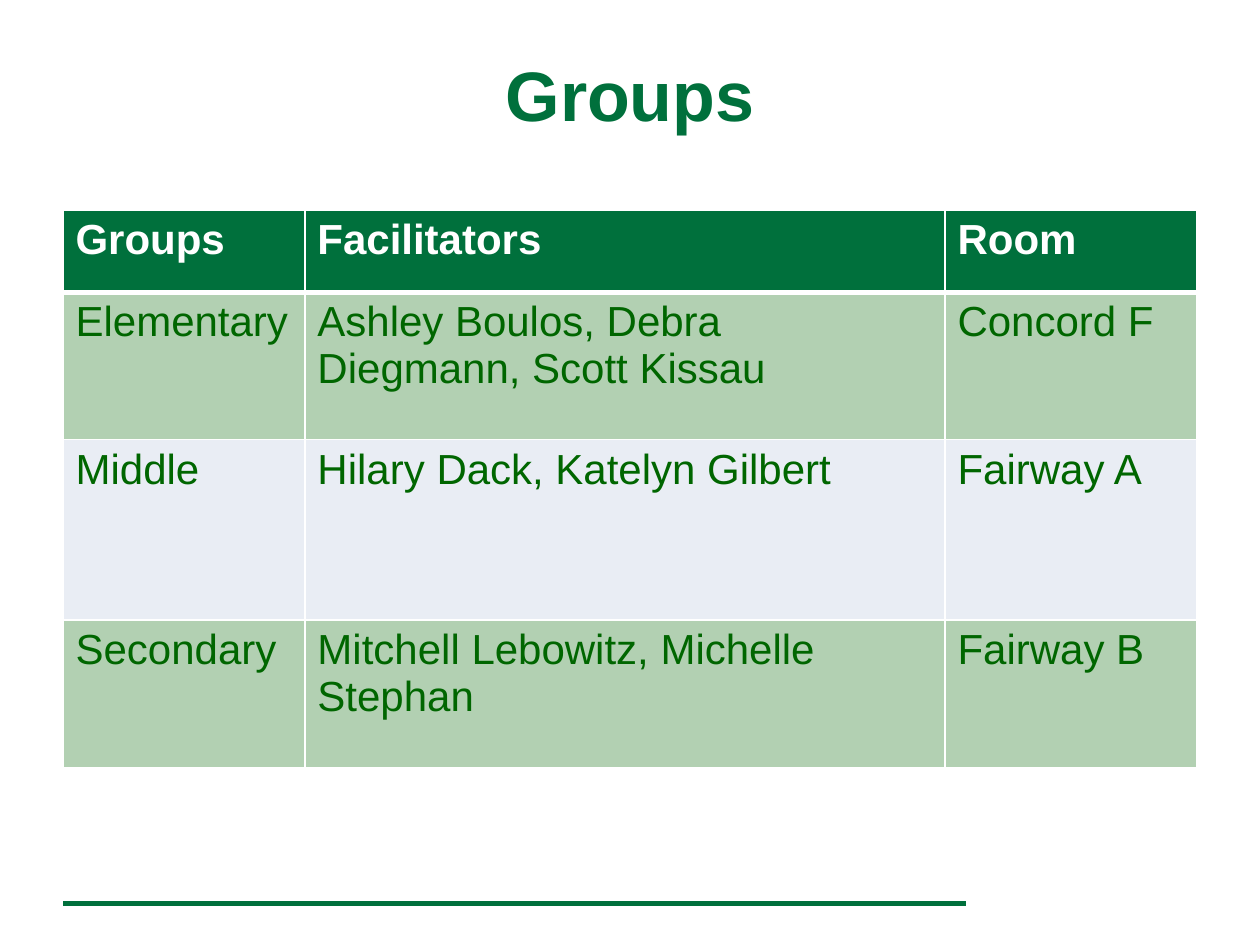
from typing import NamedTuple

from lxml import etree
from pptx import Presentation
from pptx.dml.color import RGBColor
from pptx.enum.shapes import MSO_CONNECTOR
from pptx.enum.text import PP_ALIGN
from pptx.oxml.ns import qn
from pptx.util import Inches, Pt

STRAIGHT = MSO_CONNECTOR.STRAIGHT
CENTER = PP_ALIGN.CENTER

COLORS = {
    "brand_green": "00703C",
    "dark_green": "006600",
    "pale_blue": "E9EDF4",
    "white": "FFFFFF",
}
COLUMN_WIDTHS = (1.92, 5.08, 2)


class RowStyle(NamedTuple):
    fill: str
    text: str
    bold: bool = False
    opacity: int = 100
    top_border: float = 1
    bottom_border: float = 1


class GroupRow(NamedTuple):
    height: float
    texts: tuple[str, str, str]
    style: RowStyle


HEADER = RowStyle("brand_green", "white", bold=True, bottom_border=3)
SHADED = RowStyle("dark_green", "dark_green", opacity=30)
FIRST_SHADED = SHADED._replace(top_border=3)
PLAIN = RowStyle("pale_blue", "dark_green")

ROWS = (
    GroupRow(0.65, ("Groups", "Facilitators", "Room"), HEADER),
    GroupRow(1.17, ("Elementary", "Ashley Boulos, Debra Diegmann, Scott Kissau",
                    "Concord F"), FIRST_SHADED),
    GroupRow(1.43, ("Middle", "Hilary Dack, Katelyn Gilbert", "Fairway A"), PLAIN),
    GroupRow(1.17, ("Secondary", "Mitchell Lebowitz, Michelle Stephan",
                    "Fairway B"), SHADED),
)


def color(name: str) -> RGBColor:
    return RGBColor.from_string(COLORS[name])


def format_text(paragraph, text: str, color_name: str, size: float, bold: bool) -> None:
    paragraph.text = text
    font = paragraph.runs[0].font
    for attribute, value in {"name": "Arial", "size": Pt(size), "bold": bold}.items():
        setattr(font, attribute, value)
    font.color.rgb = color(color_name)


def set_borders(cell, style: RowStyle) -> None:
    """Put white border lines ahead of the fill, as the schema requires."""
    properties = cell._tc.get_or_add_tcPr()
    widths = {"lnL": 1, "lnR": 1, "lnT": style.top_border, "lnB": style.bottom_border}
    for index, (tag, width) in enumerate(widths.items()):
        line = etree.Element(qn(f"a:{tag}"), w=str(Pt(width)))
        fill = etree.SubElement(line, qn("a:solidFill"))
        etree.SubElement(fill, qn("a:srgbClr"), val=COLORS["white"])
        properties.insert(index, line)


def style_cell(cell, text: str, style: RowStyle) -> None:
    format_text(cell.text_frame.paragraphs[0], text, style.text, 24, style.bold)
    cell.fill.solid()
    cell.fill.fore_color.rgb = color(style.fill)
    if style.opacity < 100:
        fill_color = cell._tc.tcPr.find(qn("a:solidFill")).find(qn("a:srgbClr"))
        etree.SubElement(fill_color, qn("a:alpha"), val=str(style.opacity * 1000))
    set_borders(cell, style)


def add_groups_table(slide) -> None:
    height = sum(row.height for row in ROWS)
    table = slide.shapes.add_table(
        len(ROWS), len(COLUMN_WIDTHS), Inches(0.5), Inches(1.67),
        Inches(sum(COLUMN_WIDTHS)), Inches(height)).table
    for column, width in zip(table.columns, COLUMN_WIDTHS):
        column.width = Inches(width)
    for table_row, row in zip(table.rows, ROWS):
        table_row.height = Inches(row.height)
        for cell, text in zip(table_row.cells, row.texts):
            style_cell(cell, text, row.style)


def add_title(slide, text: str) -> None:
    title = slide.shapes.add_textbox(Inches(0), Inches(0.3), Inches(10), Inches(1.25))
    title.text_frame.word_wrap = True
    title.text_frame.margin_top = Inches(0.11)
    paragraph = title.text_frame.paragraphs[0]
    paragraph.alignment = CENTER
    format_text(paragraph, text, "brand_green", 40, True)


def add_footer_line(slide) -> None:
    line = slide.shapes.add_connector(
        STRAIGHT, Inches(0.5), Inches(7.17), Inches(7.67), Inches(7.17))
    line.line.color.rgb = color("brand_green")
    line.line.width = Pt(2.5)
    etree.SubElement(line._element.spPr, qn("a:effectLst"))


def main() -> None:
    presentation = Presentation()
    presentation.slide_width = Inches(10)
    presentation.slide_height = Inches(7.5)
    slide = presentation.slides.add_slide(presentation.slide_layouts[6])
    add_footer_line(slide)
    add_groups_table(slide)
    add_title(slide, "Groups")
    presentation.save("out.pptx")


if __name__ == "__main__":
    main()
